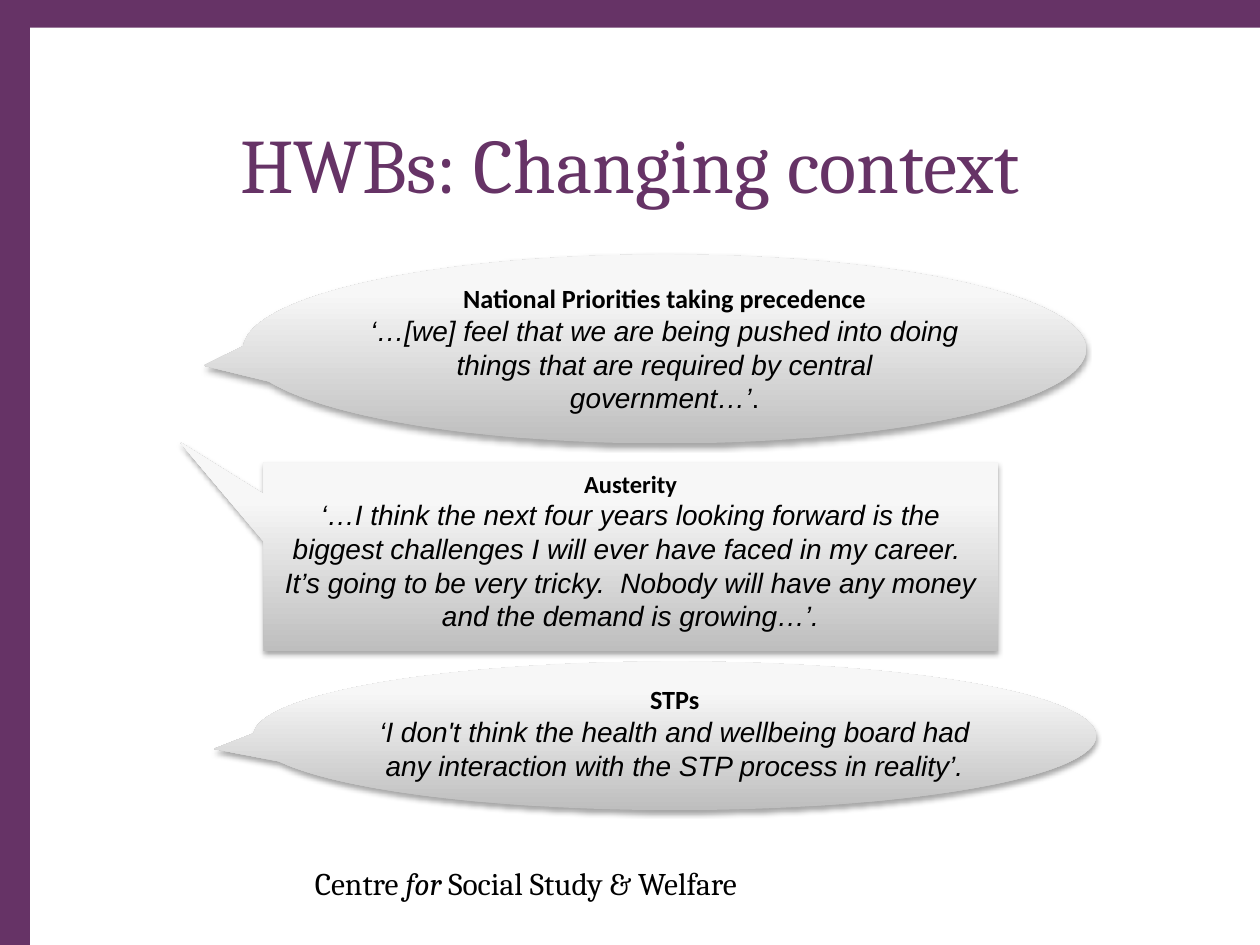
"""Build the slide on the changing context of HWBs, with three quotation callouts."""
from pptx import Presentation
from pptx.dml.color import RGBColor
from pptx.enum.shapes import MSO_SHAPE as Shape
from pptx.enum.text import MSO_ANCHOR as Anchor, PP_ALIGN as Align
from pptx.oxml import parse_xml
from pptx.oxml.ns import nsdecls
from pptx.util import Inches, Pt

PURPLE = RGBColor(0x66, 0x33, 0x66)
WHITE = RGBColor(0xFF, 0xFF, 0xFF)
BLACK = RGBColor(0, 0, 0)
GRADIENT_STOPS = [
    (0, RGBColor(0xBE, 0xBE, 0xBE)),
    (80, RGBColor(0xF7, 0xF7, 0xF7)),
    (100, RGBColor(0xF8, 0xF8, 0xF8)),
]


def set_font(paragraph, name, size, color):
    paragraph.font.name = name
    paragraph.font.size = Pt(size)
    paragraph.font.color.rgb = color


def add_gradient_and_shadow(shape):
    shape.line.fill.background()
    stops = "".join(
        f'<a:gs pos="{position * 1000}"><a:srgbClr val="{color}"/></a:gs>'
        for position, color in GRADIENT_STOPS
    )
    gradient = parse_xml(
        f'<a:gradFill {nsdecls("a")} rotWithShape="1"><a:gsLst>{stops}</a:gsLst>'
        '<a:lin ang="16200000" scaled="0"/></a:gradFill>'
    )
    shadow = parse_xml(
        f'<a:effectLst {nsdecls("a")}><a:outerShdw blurRad="{Pt(3.1)}" dist="{Pt(1.8)}" '
        'dir="5400000" rotWithShape="0"><a:srgbClr val="000000"><a:alpha val="35000"/>'
        '</a:srgbClr></a:outerShdw></a:effectLst>'
    )
    outline = shape.element.spPr.ln
    outline.addprevious(gradient)
    outline.addnext(shadow)


presentation = Presentation()
presentation.slide_width = Inches(10)
presentation.slide_height = Inches(7.5)
slide = presentation.slides.add_slide(presentation.slide_layouts[5])
shapes = slide.shapes
title = shapes.title

for left, top, color in [(0, 0, PURPLE), (0.24, 0.22, WHITE)]:
    panel = shapes.add_shape(
        Shape.RECTANGLE, Inches(left), Inches(top), Inches(10 - left), Inches(7.5 - top)
    )
    panel.fill.solid()
    panel.fill.fore_color.rgb = color
    panel.line.fill.background()
    panel.shadow.inherit = False
    title.element.addprevious(panel.element)

title.left, title.top = Inches(0.75), Inches(0.67)
title.width, title.height = Inches(8.5), Inches(1.25)
title.text_frame.text = "HWBs: Changing context"
title.text_frame.vertical_anchor = Anchor.MIDDLE
title.text_frame.paragraphs[0].alignment = Align.CENTER
set_font(title.text_frame.paragraphs[0], "Cambria", 44, PURPLE)

footer = shapes.add_textbox(Inches(2.4), Inches(6.51), Inches(4.33), Inches(0.99))
footer.text_frame.word_wrap = True
footer.text_frame.margin_top = Inches(0.35)
paragraph = footer.text_frame.paragraphs[0]
set_font(paragraph, "Cambria", 18, BLACK)
for text, italic in [("Centre ", False), ("for", True), (" Social Study & Welfare", False)]:
    run = paragraph.add_run()
    run.text = text
    run.font.italic = italic

ELLIPSE = (Shape.OVAL_CALLOUT, (-0.547, 0.088), (0, 0))
RECTANGLE = (Shape.RECTANGULAR_CALLOUT, (-0.614, -0.609), (0.1, 0.05))
callouts = [
    (ELLIPSE, (1.93, 2.02, 6.69, 1.5), "National Priorities taking precedence", 15,
     "‘…[we] feel that we are being pushed into doing things that are required by "
     "central government…’", "."),
    (RECTANGLE, (2.09, 3.67, 5.83, 1.5), "Austerity", 14,
     "‘…I think the next four years looking forward is the biggest challenges I will "
     "ever have faced in my career.  It’s going to be very tricky.  Nobody will have "
     "any money and the demand is growing…’.", ""),
    (ELLIPSE, (2.01, 5.25, 6.69, 1.18), "STPs", 15,
     "‘I don't think the health and wellbeing board had any interaction with the STP "
     "process in reality’.", ""),
]
for (kind, pointer, margins), box, heading, heading_size, quotation, ending in callouts:
    callout = shapes.add_shape(kind, *[Inches(length) for length in box])
    callout.adjustments[0], callout.adjustments[1] = pointer
    add_gradient_and_shadow(callout)

    frame = callout.text_frame
    frame.word_wrap = True
    frame.vertical_anchor = Anchor.TOP
    frame.margin_left = frame.margin_right = Inches(margins[0])
    frame.margin_top = frame.margin_bottom = Inches(margins[1])

    paragraph = frame.paragraphs[0]
    paragraph.text = heading
    paragraph.alignment = Align.CENTER
    paragraph.font.bold = True
    set_font(paragraph, "Calibri", heading_size, BLACK)

    paragraph = frame.add_paragraph()
    paragraph.alignment = Align.CENTER
    set_font(paragraph, "Arial", 16, BLACK)
    run = paragraph.add_run()
    run.text = quotation
    run.font.italic = True
    if ending:
        paragraph.add_run().text = ending

presentation.save("out.pptx")
